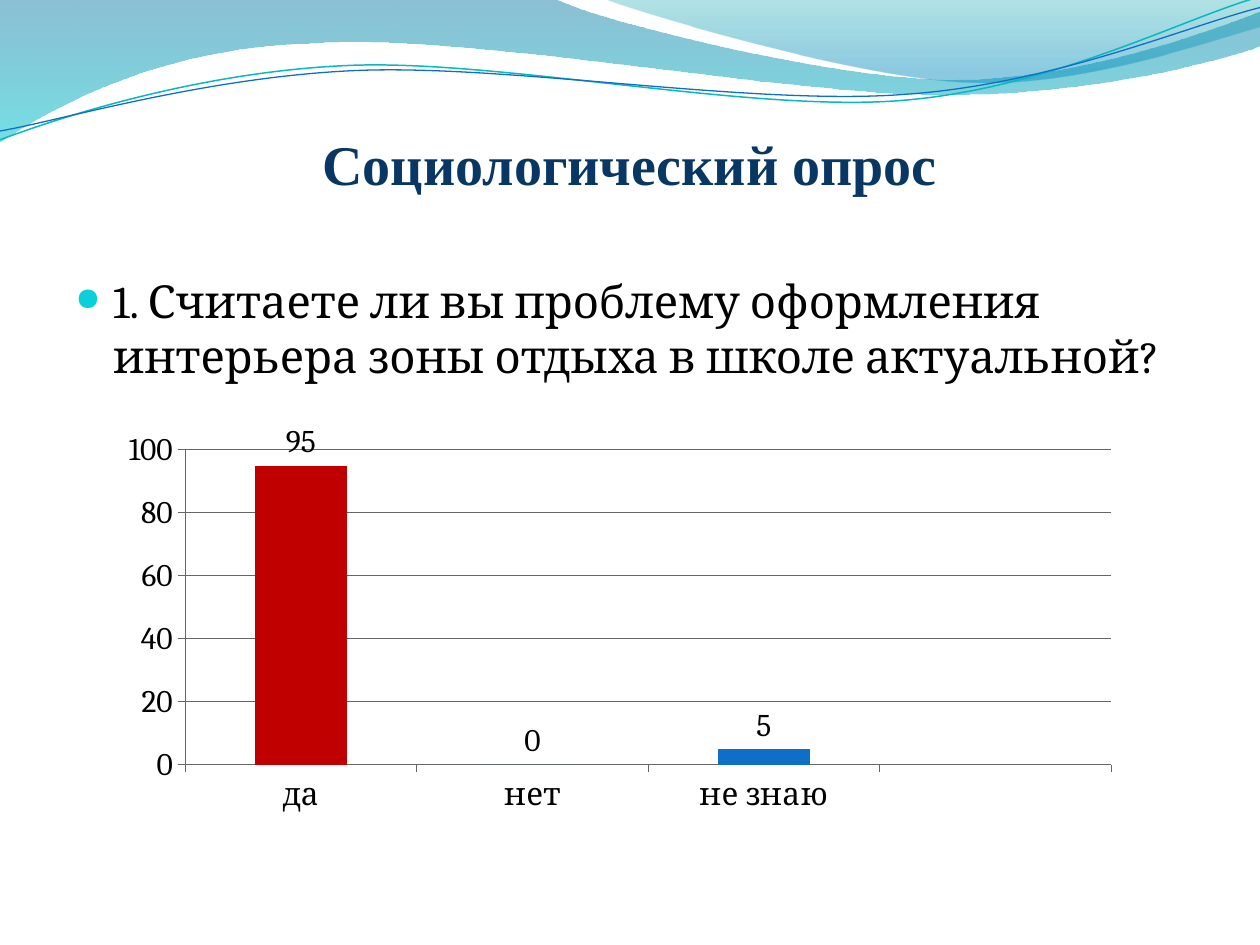
from lxml.etree import SubElement
from pptx import Presentation
from pptx.chart.data import CategoryChartData
from pptx.dml.color import RGBColor
from pptx.enum.chart import XL_CHART_TYPE, XL_LABEL_POSITION, XL_TICK_MARK
from pptx.enum.text import MSO_ANCHOR, PP_ALIGN
from pptx.oxml import parse_xml
from pptx.oxml.ns import nsdecls, qn
from pptx.util import Inches, Pt

W, H = 10, 7.5
COLS, ROWS = 100, 75


def rgb(value):
    return RGBColor.from_string(value)


class Deck:
    ink = "000000"
    axis = "666666"
    body_font = "Cambria"

    def __init__(self):
        self.prs = Presentation()
        self.prs.slide_width, self.prs.slide_height = Inches(W), Inches(H)
        self.s = self.prs.slides.add_slide(self.prs.slide_layouts[6])

    def box(self, col, row, cols, rows):
        return (Inches(col * W / COLS), Inches(row * H / ROWS),
                Inches(cols * W / COLS), Inches(rows * H / ROWS))

    def set(self, obj, values):
        for name, value in values.items():
            setattr(obj, name, value)

    def font(self, font, color, **values):
        self.set(font, values)
        font.color.rgb = rgb(color)

    def outline(self, segments, close):
        points = [(round(x * 100), round(y * 100))
                  for seg in segments for x, y in zip(seg[::2], seg[1::2])]
        fb = self.s.shapes.build_freeform(*points[0], scale=Inches(0.01))
        fb.add_line_segments(points[1:], close=close)
        sp = fb.convert_to_shape()
        sp.shadow.inherit = False
        steps = iter(list(sp._element.iter(qn("a:lnTo"))))
        for seg in segments[1:]:
            first = next(steps)
            if len(seg) == 6:
                cubic = first.makeelement(qn("a:cubicBezTo"))
                first.addprevious(cubic)
                for step in (first, next(steps), next(steps)):
                    cubic.append(step[0])
                    step.getparent().remove(step)
        return sp

    def wave(self, segments, stops):
        sp = self.outline(segments, True)
        sp.line.fill.background()
        sp.fill.gradient()
        grad = sp.fill._xPr.find(qn("a:gradFill"))
        gs = "".join(
            f'<a:gs pos="{pos * 1000}"><a:srgbClr val="{color}">'
            f'<a:alpha val="{alpha * 1000}"/></a:srgbClr></a:gs>'
            for pos, color, alpha in stops)
        grad.getparent().replace(grad, parse_xml(
            f'<a:gradFill {nsdecls("a")} rotWithShape="1"><a:gsLst>{gs}</a:gsLst>'
            '<a:lin ang="5400000" scaled="0"/></a:gradFill>'))

    def stroke(self, segments, color, width):
        sp = self.outline(segments, False)
        sp.fill.background()
        sp.line.color.rgb = rgb(color)
        sp.line.width = Pt(width)

    def text(self, at, words, frame, para, color, **font):
        tf = self.s.shapes.add_textbox(*self.box(*at)).text_frame
        self.set(tf, {"word_wrap": True, **frame})
        p = tf.paragraphs[0]
        self.set(p, para)
        r = p.add_run()
        r.text = words
        self.font(r.font, color, **font)
        return p

    def bullet(self, p, char, color, percent, indent):
        ppr = p._p.get_or_add_pPr()
        ppr.set("marL", str(Inches(indent)))
        ppr.set("indent", str(-Inches(indent)))
        SubElement(SubElement(ppr, qn("a:buClr")), qn("a:srgbClr")).set("val", color)
        SubElement(ppr, qn("a:buSzPct")).set("val", str(percent * 1000))
        SubElement(ppr, qn("a:buChar")).set("char", char)

    def columns(self, at, inner, cats, name, values, color, points):
        data = CategoryChartData()
        data.categories = cats
        data.add_series(name, values)
        chart = self.s.shapes.add_chart(
            XL_CHART_TYPE.COLUMN_CLUSTERED, *self.box(*at), data).chart
        self.set(chart, {"has_legend": False, "has_title": False})
        self.font(chart.font, self.ink, size=Pt(18), name=self.body_font)
        for axis in (chart.category_axis, chart.value_axis):
            axis.major_tick_mark = XL_TICK_MARK.OUTSIDE
            axis.format.line.color.rgb = rgb(self.axis)
        va = chart.value_axis
        self.set(va, {"minimum_scale": 0, "maximum_scale": 100, "major_unit": 20,
                      "has_major_gridlines": True})
        va.major_gridlines.format.line.color.rgb = rgb(self.axis)
        plot = chart.plots[0]
        self.set(plot, {"gap_width": 150, "vary_by_categories": False})
        series = plot.series[0]
        series.format.fill.solid()
        series.format.fill.fore_color.rgb = rgb(color)
        for i, tone in points.items():
            fill = series.points[i].format.fill
            fill.solid()
            fill.fore_color.rgb = rgb(tone)
        self.set(series.data_labels, {"show_value": True,
                                      "position": XL_LABEL_POSITION.OUTSIDE_END})
        area = chart._chartSpace.chart.plotArea
        for old in area.findall(qn("c:layout")):
            area.remove(old)
        x, y, w, h = at
        shares = {"x": (inner[0] - x) / w, "y": (inner[1] - y) / h,
                  "w": inner[2] / w, "h": inner[3] / h}
        parts = "".join(f'<c:{k} val="{v:.4f}"/>' for k, v in shares.items())
        area.insert(0, parse_xml(
            f'<c:layout {nsdecls("c")}><c:manualLayout><c:layoutTarget val="inner"/>'
            f'<c:xMode val="edge"/><c:yMode val="edge"/>{parts}'
            '</c:manualLayout></c:layout>'))


def main():
    d = Deck()
    d.wave([(0, 0), (4.4, -0.01), (4.76, 0.17, 6.64, 0.63, 7.58, 0.63),
            (8.53, 0.63, 9.58, 0.26, 10, 0.09), (10.01, 0.36),
            (9.83, 0.44, 8.7, 0.76, 7.46, 0.75),
            (6.22, 0.75, 3.82, 0.28, 2.57, 0.34),
            (1.29, 0.36, 0.46, 0.83, -0.01, 1.13)],
           [(0, "0074A1", 45), (100, "00C6CF", 55)])
    d.wave([(4.79, -0.01), (5.09, 0.11, 6.82, 0.62, 7.69, 0.65),
            (8.56, 0.69, 9.61, 0.32, 10, 0.21), (10, 0)],
           [(0, "00A1A9", 30), (80, "008BBF", 45)])
    d.stroke([(0, 1.11), (0.48, 0.93, 1.58, 0.57, 2.77, 0.52),
              (3.95, 0.47, 5.93, 0.89, 7.13, 0.8),
              (8.33, 0.71, 9.38, 0.15, 9.98, -0.02)], "0AB8BF", 0.85)
    d.stroke([(0, 1.04), (0.47, 0.96, 1.64, 0.61, 2.83, 0.56),
              (4.03, 0.51, 5.97, 0.84, 7.17, 0.75),
              (8.36, 0.67, 9.41, 0.21, 10, 0.06)], "0F6FC6", 0.75)
    d.text((5, 7.7, 90, 7.9), "Социологический опрос",
           {"vertical_anchor": MSO_ANCHOR.BOTTOM, "margin_left": 0,
            "margin_right": 0, "margin_bottom": 0},
           {"alignment": PP_ALIGN.CENTER}, "083763",
           name="Times New Roman", size=Pt(32), bold=True)
    question = d.text(
        (5, 21.2, 90, 48),
        "1. Считаете ли вы проблему оформления интерьера зоны отдыха в школе актуальной?",
        {}, {"space_before": Pt(5.2)}, d.ink, name=d.body_font, size=Pt(26))
    d.bullet(question, "●", "0BD0D9", 70, 0.3)
    d.columns((8.6, 33.6, 81.3, 31.6), (14.7, 35.7, 73.5, 25),
              ["да", "нет", "не знаю", ""], "Series 1",
              [95, 0, 5, None], "0F6FC6", {0: "C00000"})
    d.prs.save("out.pptx")


if __name__ == "__main__":
    main()
